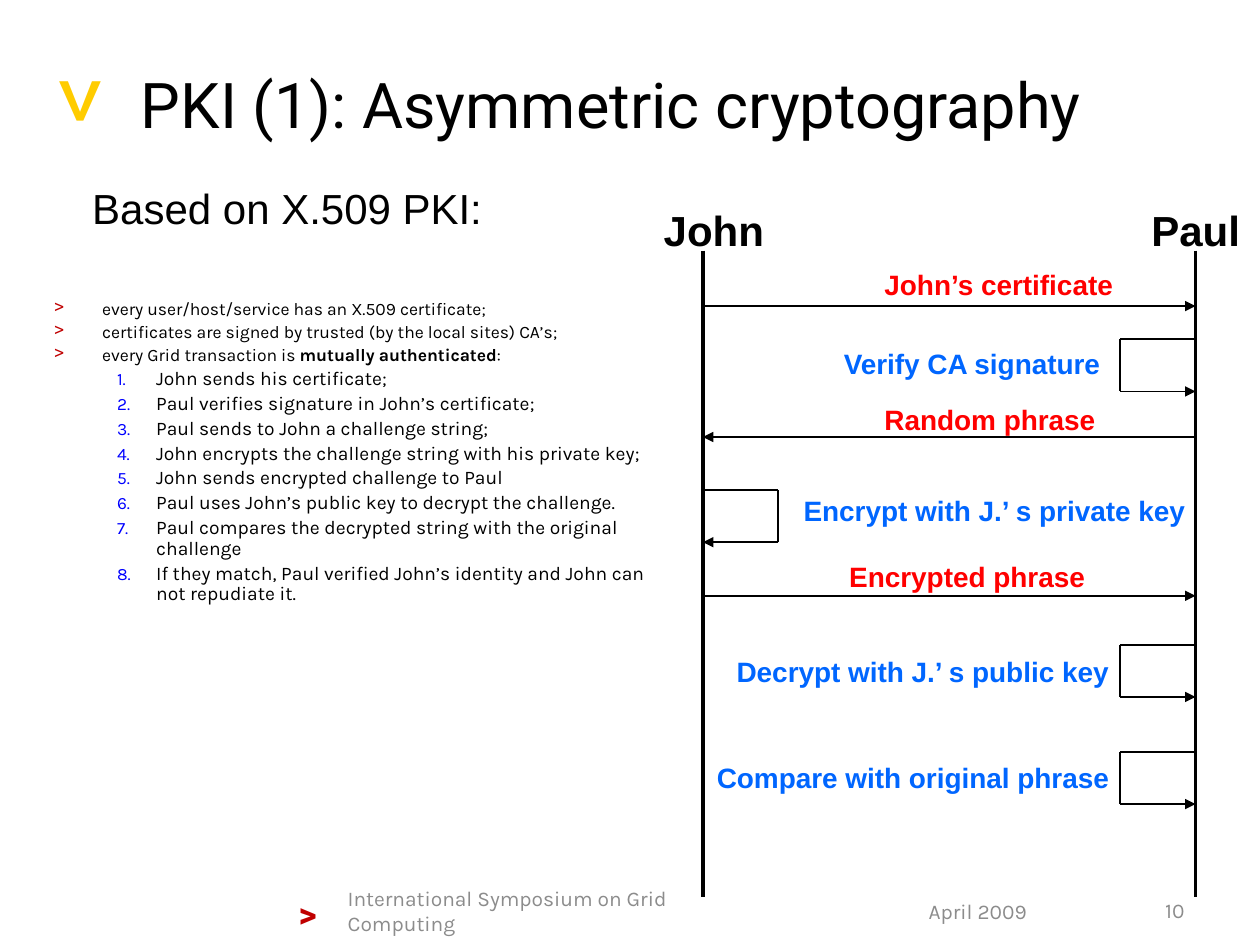
import pptx
import pptx.dml.color
import pptx.enum.shapes
import pptx.enum.text
import pptx.oxml
import pptx.oxml.ns
import pptx.util
from pptx.util import Cm

COLORS = {"black": "000000", "red": "FF0000", "blue": "0066FF", "number": "0000FF",
          "crimson": "C00000", "gold": "FFCC00", "gray": "8C8C8C"}
ALIGN = pptx.enum.text.PP_ALIGN
MIDDLE = pptx.enum.text.MSO_ANCHOR.MIDDLE

# Text boxes: text, (left, top, width, height) in cm, font, size, color, options
TEXTS = [
    (">", (5.77, 17.86, 1.19, 1.12), "Roboto", 20, "crimson", {"bold": True}),
    (">", (1.17, 0.58, 1.19, 2.57), "Roboto", 54, "gold", {"rotation": 90}),
    ("PKI (1): Asymmetric cryptography", (2.59, 0.97, 21.54, 2.21), "Roboto", 36, "black",
     {"anchor": MIDDLE}),
    ("April 2009", (18.47, 18.06, 2.97, 0.61), "Karla", 12, "gray", {"anchor": MIDDLE}),
    ("International Symposium on Grid Computing", (6.76, 18.06, 9.12, 0.61), "Karla", 12,
     "gray", {"anchor": MIDDLE}),
    ("10", (22.81, 18.06, 1.32, 0.58), "Karla", 12, "gray",
     {"anchor": MIDDLE, "align": ALIGN.RIGHT}),
    ("Based on X.509 PKI:", (1.6, 3.56, 8.38, 1.27), "Arial", 24, "black",
     {"align": ALIGN.CENTER, "wrap": False}),
    ("John", (13.13, 3.99, 2.54, 1.27), "Arial", 24, "black", {"bold": True}),
    ("Paul", (22.96, 3.99, 2.29, 1.27), "Arial", 24, "black", {"bold": True, "wrap": False}),
]

# Bullet list: each item is a list of (text, bold)
FACTS = [
    [("every user/host/service has an X.509 certificate;", False)],
    [("certificates are signed by trusted (by the local sites) CA’s;", False)],
    [("every Grid transaction is ", False), ("mutually authenticated", True), (":", False)],
]
STEPS = [
    "John sends his certificate;",
    "Paul verifies signature in John’s certificate;",
    "Paul sends to John a challenge string;",
    "John encrypts the challenge string with his private key;",
    "John sends encrypted challenge to Paul",
    "Paul uses John’s public key to decrypt the challenge.",
    "Paul compares the decrypted string with the original challenge",
    "If they match, Paul verified John’s identity and John can not repudiate it.",
]

# Sequence diagram, in cm
JOHN, PAUL = 14.17, 24.1
LIFE_TOP, LIFE_BOTTOM = 5.05, 18.08
LOOP_WIDTH, LOOP_HEIGHT, LABEL_HEIGHT = 1.52, 1.05, 0.94
# Messages: label, sender, receiver, y, line width, label left, top, width
MESSAGES = [
    ("John’s certificate", JOHN, PAUL, 6.17, 1, 17.58, 5.26, 5.16),
    ("Random phrase", PAUL, JOHN, 8.81, 0.75, 17.58, 8.0, 4.78),
    ("Encrypted phrase", JOHN, PAUL, 12.01, 1, 16.87, 11.15, 5.28),
]
# Own actions: label, actor, top of the loop, label left, top, width
ACTIONS = [
    ("Verify CA signature", PAUL, 6.84, 16.76, 6.86, 5.74),
    ("Encrypt with J.’ s private key", JOHN, 9.88, 15.95, 9.83, 8.28),
    ("Decrypt with J.’ s public key", PAUL, 13.0, 14.6, 13.08, 8.08),
    ("Compare with original phrase", PAUL, 15.16, 14.2, 15.21, 8.46),
]


def rgb(name):
    return pptx.dml.color.RGBColor.from_string(COLORS[name])


def add_child(parent, tag, **attributes):
    child = pptx.oxml.parse_xml(f"<{tag} {pptx.oxml.ns.nsdecls('a')}/>")
    for key, value in attributes.items():
        child.set(key, str(value))
    parent.append(child)
    return child


def style(span, font, size, color, bold=False):
    span.font.name = font
    span.font.size = pptx.util.Pt(size)
    span.font.bold = bold
    span.font.color.rgb = rgb(color)


def add_text(page, text, place, font, size, color, bold=False, rotation=0,
             anchor=None, align=None, wrap=True):
    box = page.shapes.add_textbox(*map(Cm, place))
    box.rotation = rotation
    frame = box.text_frame
    frame.word_wrap = wrap
    frame.text = text
    if anchor is not None:
        frame.vertical_anchor = anchor
    para = frame.paragraphs[0]
    para.alignment = align
    style(para.runs[0], font, size, color, bold)


def add_line(page, x1, y1, x2, y2, width=1, arrow=False):
    line = page.shapes.add_connector(pptx.enum.shapes.MSO_CONNECTOR.STRAIGHT,
                                     Cm(x1), Cm(y1), Cm(x2), Cm(y2))
    line.line.width = pptx.util.Pt(width)
    line.line.color.rgb = rgb("black")
    if arrow:
        add_child(line.line._get_or_add_ln(), "a:tailEnd", type="triangle")
    add_child(line._element.spPr, "a:effectLst")


def add_list(page):
    box = page.shapes.add_textbox(Cm(0.84), Cm(5.26), Cm(12.78), Cm(13.18))
    frame = box.text_frame
    frame.word_wrap = True
    frame.margin_top = Cm(0.79)
    items = [(spans, 0) for spans in FACTS] + [([(step, False)], 1) for step in STEPS]
    for index, (spans, level) in enumerate(items):
        para = frame.add_paragraph() if index else frame.paragraphs[0]
        para.level = level
        margin, indent = ((0.97, -0.97), (2.06, -0.79))[level]
        props = para._p.get_or_add_pPr()
        props.set("marL", str(Cm(margin)))
        props.set("indent", str(Cm(indent)))
        bullet_color = add_child(props, "a:buClr")
        add_child(bullet_color, "a:srgbClr", val=COLORS["number" if level else "crimson"])
        if level:
            add_child(props, "a:buSzPct", val=90000)
            add_child(props, "a:buAutoNum", type="arabicPeriod")
        else:
            add_child(props, "a:buChar", char=">")
        para.line_spacing = 0.9
        if index:
            para.space_before = pptx.util.Pt(2.3)
        for text, bold in spans:
            span = para.add_run()
            span.text = text
            style(span, "Karla", 10 + level, "black", bold)


def add_label(page, text, left, top, width, color):
    add_text(page, text, (left, top, width, LABEL_HEIGHT), "Arial", 16, color,
             bold=True, wrap=False)


def add_sequence(page):
    # Lifelines
    for x in (JOHN, PAUL):
        add_line(page, x, LIFE_TOP, x, LIFE_BOTTOM, width=2)
    # Messages between the two
    for text, sender, receiver, y, width, *place in MESSAGES:
        add_line(page, sender, y, receiver, y, width, arrow=True)
        add_label(page, text, *place, "red")
    # Loops back to the actor
    for text, actor, top, *place in ACTIONS:
        side = actor + (LOOP_WIDTH if actor == JOHN else -LOOP_WIDTH)
        bottom = top + LOOP_HEIGHT
        add_line(page, actor, top, side, top)
        add_line(page, side, top, side, bottom)
        add_line(page, side, bottom, actor, bottom, arrow=True)
        add_label(page, text, *place, "blue")


def main():
    deck = pptx.Presentation()
    deck.slide_width, deck.slide_height = Cm(25.4), Cm(19.05)
    page = deck.slides.add_slide(deck.slide_layouts[6])
    for text, place, font, size, color, options in TEXTS:
        add_text(page, text, place, font, size, color, **options)
    add_list(page)
    add_sequence(page)
    deck.save("out.pptx")


if __name__ == "__main__":
    main()
